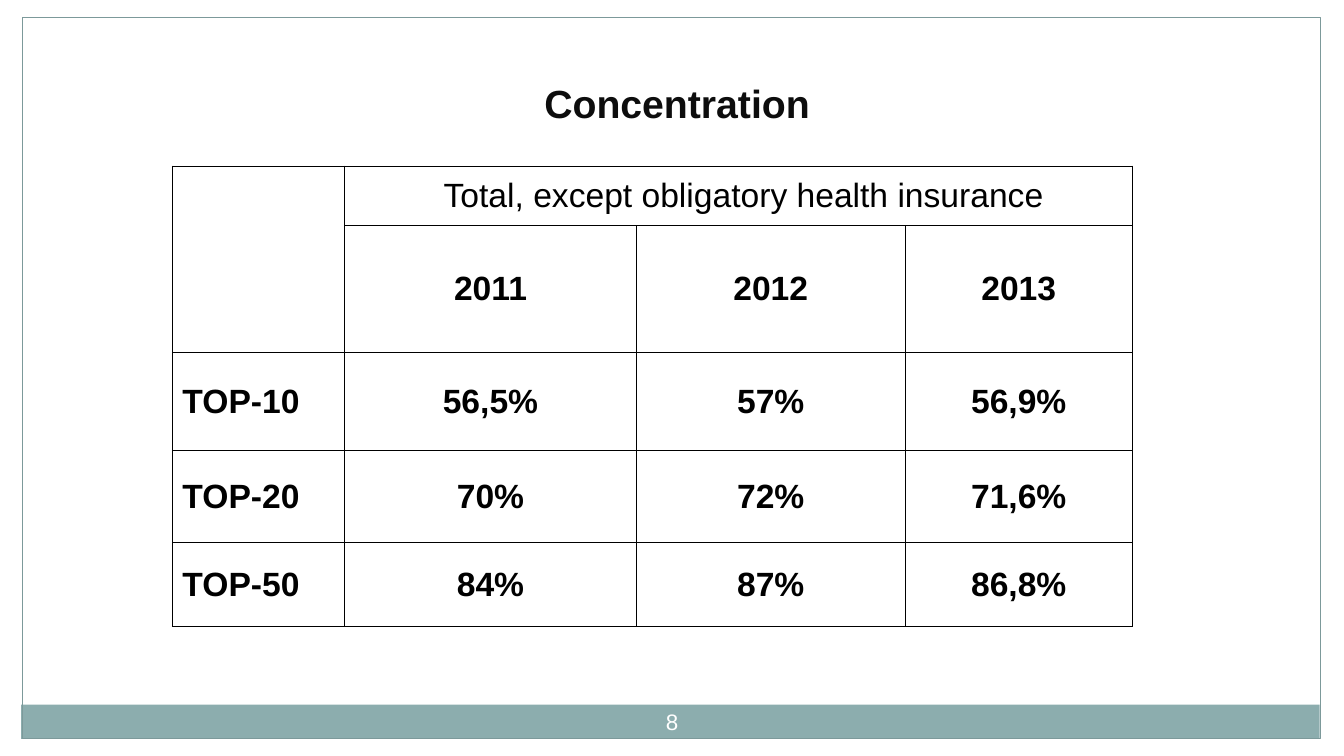
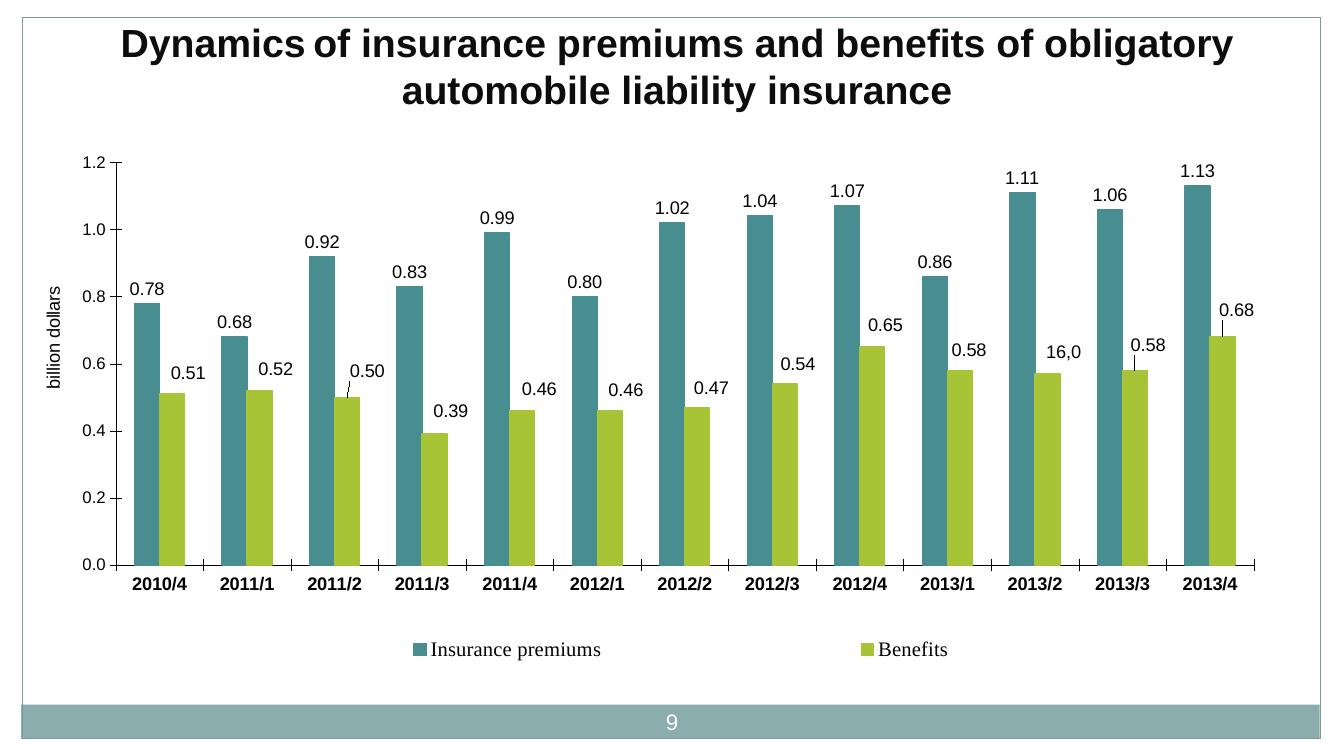
from lxml import etree
from pptx import Presentation
from pptx import util as u
from pptx.chart import data as cd
from pptx.dml.color import RGBColor
from pptx.enum import chart as ch
from pptx.enum import shapes, text
from pptx.oxml import ns, parse_xml

BLACK = RGBColor(0x00, 0x00, 0x00)
INK = RGBColor(0x0D, 0x0D, 0x0D)
WHITE = RGBColor(0xFF, 0xFF, 0xFF)
BAND = RGBColor(0x8C, 0xAD, 0xAE)
FRAME = RGBColor(0x7C, 0x99, 0x9A)
TEAL = RGBColor(0x48, 0x8E, 0x91)
LIME = RGBColor(0xA6, 0xC4, 0x36)

SANS, SERIF = "Arial", "Times New Roman"
MID, LOW = text.MSO_ANCHOR.MIDDLE, text.MSO_ANCHOR.BOTTOM
LEFT, MIDDLE = text.PP_ALIGN.LEFT, text.PP_ALIGN.CENTER

WIDE, HIGH, EDGE = 13.33, 7.5, 0.22
MARGINS = [(0, 0, WIDE, 0.17), (WIDE - EDGE, 0, EDGE, HIGH), (0, 0, EDGE, HIGH)]

COLS = [1.71, 2.89, 2.67, 2.25]
ROWS = [0.59, 1.26, 0.97, 0.91, 0.84]
CELLS = [
    ["", "Total, except obligatory health insurance", "", ""],
    ["", "2011", "2012", "2013"],
    ["TOP-10", "56,5%", "57%", "56,9%"],
    ["TOP-20", "70%", "72%", "71,6%"],
    ["TOP-50", "84%", "87%", "86,8%"],
]

TERMS = ["2010/4"] + [f"{y}/{q}" for y in (2011, 2012, 2013) for q in range(1, 5)]
PREMIUMS = [0.78, 0.68, 0.92, 0.83, 0.99, 0.80, 1.02,
            1.04, 1.07, 0.86, 1.11, 1.06, 1.13]
BENEFITS = [0.51, 0.52, 0.50, 0.39, 0.46, 0.46, 0.47,
            0.54, 0.65, 0.58, 0.57, 0.58, 0.68]
# Label shifts right and up from the bar end, in inches
SHIFTS = [(0.16, 0.06), (0.16, 0.07), (0.2, 0.12), (0.16, 0.08), (0.17, 0.07),
          (0.16, 0.06), (0.14, 0.05), (0.13, 0.05), (0.13, 0.07), (0.09, 0.06),
          (0.16, 0.07), (0.13, 0.11), (0.14, 0.12)]
BARE = ('<c:extLst %s><c:ext uri="{CE6537A1-D6FC-4f65-9D91-7224C49458BB}" '
        'xmlns:c15="http://schemas.microsoft.com/office/drawing/2012/chart">'
        '<c15:showLeaderLines val="0"/></c:ext></c:extLst>' % ns.nsdecls("c"))


def style(font, size, color=BLACK, bold=False, name=SANS):
    font.name, font.size, font.bold = name, u.Pt(size), bold
    font.color.rgb = color


def layout(inner=False, edge=True, **sizes):
    """Build a manual chart layout from x, y, w and h fractions."""
    tags = '<c:layoutTarget val="inner"/>' if inner else ""
    if edge:
        tags += '<c:xMode val="edge"/><c:yMode val="edge"/>'
    tags += "".join(f'<c:{k} val="{v:.4f}"/>' for k, v in sizes.items())
    return parse_xml(f'<c:layout {ns.nsdecls("c")}><c:manualLayout>{tags}'
                     "</c:manualLayout></c:layout>")


def place(node, after, new):
    """Put a layout behind the given child, in place of any old one."""
    for old in node.findall(ns.qn("c:layout")):
        node.remove(old)
    if after is None:
        node.insert(0, new)
    else:
        node.find(ns.qn(after)).addnext(new)


def rule(cell):
    """Draw a thin black border on all sides of a cell."""
    props = cell._tc.get_or_add_tcPr()
    for spot, side in enumerate(("a:lnL", "a:lnR", "a:lnT", "a:lnB")):
        line = etree.Element(ns.qn(side), w=str(u.Pt(1)))
        fill = etree.SubElement(line, ns.qn("a:solidFill"))
        etree.SubElement(fill, ns.qn("a:srgbClr"), val=str(BLACK))
        props.insert(spot, line)


class Deck:
    def __init__(self):
        self.prs = Presentation()
        self.prs.slide_width = u.Inches(WIDE)
        self.prs.slide_height = u.Inches(HIGH)
        self.slide = None

    def page(self, title, low, number):
        """Start a slide whose title ends at low; return the title paragraph."""
        self.slide = self.prs.slides.add_slide(self.prs.slide_layouts[6])
        for margin in MARGINS:
            self.rect(*margin, fill=WHITE)
        self.rect(0.21, 6.99, 12.88, 0.34, fill=BAND)
        self.rect(EDGE, 0.17, 12.88, 7.16, line=FRAME)
        head = self.text(title, 0.81, low - 1.04, 11.81, 1.04, 28, INK, True, LOW)
        self.text(str(number), 6.22, 6.92, 0.89, 0.48, 16, WHITE)
        return head

    def rect(self, x, y, w, h, fill=None, line=None):
        box = self.slide.shapes.add_shape(
            shapes.MSO_SHAPE.RECTANGLE, *map(u.Inches, (x, y, w, h)))
        box.shadow.inherit = False
        if fill:
            box.fill.solid()
            box.fill.fore_color.rgb = fill
        else:
            box.fill.background()
        if line:
            box.line.color.rgb = line
            box.line.width = u.Pt(0.75)
        else:
            box.line.fill.background()

    def text(self, words, x, y, w, h, size, color, bold=False, anchor=MID):
        box = self.slide.shapes.add_textbox(*map(u.Inches, (x, y, w, h)))
        frame = box.text_frame
        frame.word_wrap = True
        frame.vertical_anchor = anchor
        para = frame.paragraphs[0]
        para.text, para.alignment = words, MIDDLE
        style(para.font, size, color, bold)
        return para

    def table(self, x, y, cols, rows, cells):
        grid = self.slide.shapes.add_table(
            len(rows), len(cols),
            *map(u.Inches, (x, y, sum(cols), sum(rows)))).table
        grid.first_row = grid.horz_banding = False
        for col, wide in zip(grid.columns, cols):
            col.width = u.Inches(wide)
        for row, high in zip(grid.rows, rows):
            row.height = u.Inches(high)
        for r, line in enumerate(cells):
            for c, words in enumerate(line):
                cell = grid.cell(r, c)
                cell.fill.background()
                rule(cell)
                cell.vertical_anchor = MID
                para = cell.text_frame.paragraphs[0]
                para.text = words
                para.alignment = MIDDLE if c else LEFT
                style(para.font, 24, bold=r > 0)
        grid.cell(0, 0).merge(grid.cell(1, 0))
        head = grid.cell(0, 1)
        head.merge(grid.cell(0, len(cols) - 1))
        head.margin_left = u.Inches(0.2)

    def chart(self, x, y, w, h, cats, series):
        """Add a column chart; series holds name, values and colour."""
        data = cd.CategoryChartData(number_format="0.00")
        data.categories = cats
        for name, vals, _ in series:
            data.add_series(name, vals)
        chart = self.slide.shapes.add_chart(
            ch.XL_CHART_TYPE.COLUMN_CLUSTERED,
            *map(u.Inches, (x, y, w, h)), data).chart
        style(chart.font, 13)
        chart.has_title = False
        plot = chart.plots[0]
        plot.gap_width, plot.overlap = 150, 0
        plot.vary_by_categories = False
        for item, (_, _, color) in zip(plot.series, series):
            item.format.fill.solid()
            item.format.fill.fore_color.rgb = color
            item.format.line.color.rgb = color
            item.format.line.width = u.Pt(0.91)
            tags = item.data_labels
            tags.show_value = True
            tags.position = ch.XL_LABEL_POSITION.OUTSIDE_END
            style(tags.font, 13)
            tags._element.append(parse_xml(BARE))
        self.axes(chart)
        place(chart._chartSpace.chart.plotArea, None,
              layout(True, x=0.065, y=0.04, w=0.886, h=0.752))
        chart.has_legend = True
        key = chart.legend
        key.position = ch.XL_LEGEND_POSITION.BOTTOM
        key.include_in_layout = False
        style(key.font, 14.7, name=SERIF)
        place(key._element, "c:legendPos", layout(x=0.1, y=0.91, w=0.81, h=0.08))
        return chart

    def axes(self, chart):
        cat, val = chart.category_axis, chart.value_axis
        for axis, size in ((cat, 13), (val, 12)):
            axis.has_major_gridlines = False
            axis.major_tick_mark = ch.XL_TICK_MARK.CROSS
            axis.format.line.color.rgb = BLACK
            axis.format.line.width = u.Pt(0.23)
            style(axis.tick_labels.font, size, bold=axis is cat)
        val.minimum_scale, val.maximum_scale, val.major_unit = 0, 1.2, 0.2
        val.tick_labels.number_format = "0.0"
        val.tick_labels.number_format_is_linked = False
        frame = val.axis_title.text_frame
        frame.text = "billion dollars"
        frame._txBody.bodyPr.set("rot", "-5400000")
        style(frame.paragraphs[0].font, 13)
        place(val.axis_title._element, "c:tx", layout(x=0.005, y=0.265))

    def shift(self, item, moves, w, h):
        """Move each label of a series in a chart of the given size."""
        for i, (right, up) in enumerate(moves):
            tag = item.points[i].data_label
            style(tag.font, 13)
            tag.position = ch.XL_LABEL_POSITION.OUTSIDE_END
            node = item._element.xpath(f"c:dLbls/c:dLbl[c:idx/@val={i}]")[0]
            place(node, "c:idx", layout(edge=False, x=right / w, y=-up / h))


def main():
    deck = Deck()
    deck.page("Concentration", 1.3, 8)
    deck.table(1.71, 1.65, COLS, ROWS, CELLS)

    head = deck.page("Dynamics", 1.16, 9)
    for words, size in ((" ", 20), ("of insurance premiums and benefits of "
                                    "obligatory automobile liability insurance", 28)):
        run = head.add_run()
        run.text, run.font.size = words, u.Pt(size)
    wide, high = 12.74, 5.31
    chart = deck.chart(0.32, 1.4, wide, high, TERMS, [
        ("Insurance premiums", PREMIUMS, TEAL), ("Benefits", BENEFITS, LIME)])
    paid = chart.plots[0].series[1]
    deck.shift(paid, SHIFTS, wide, high)
    frame = paid.points[TERMS.index("2013/2")].data_label.text_frame
    frame.text = "16,0"
    style(frame.paragraphs[0].runs[0].font, 13)
    deck.prs.save("out.pptx")


if __name__ == "__main__":
    main()
